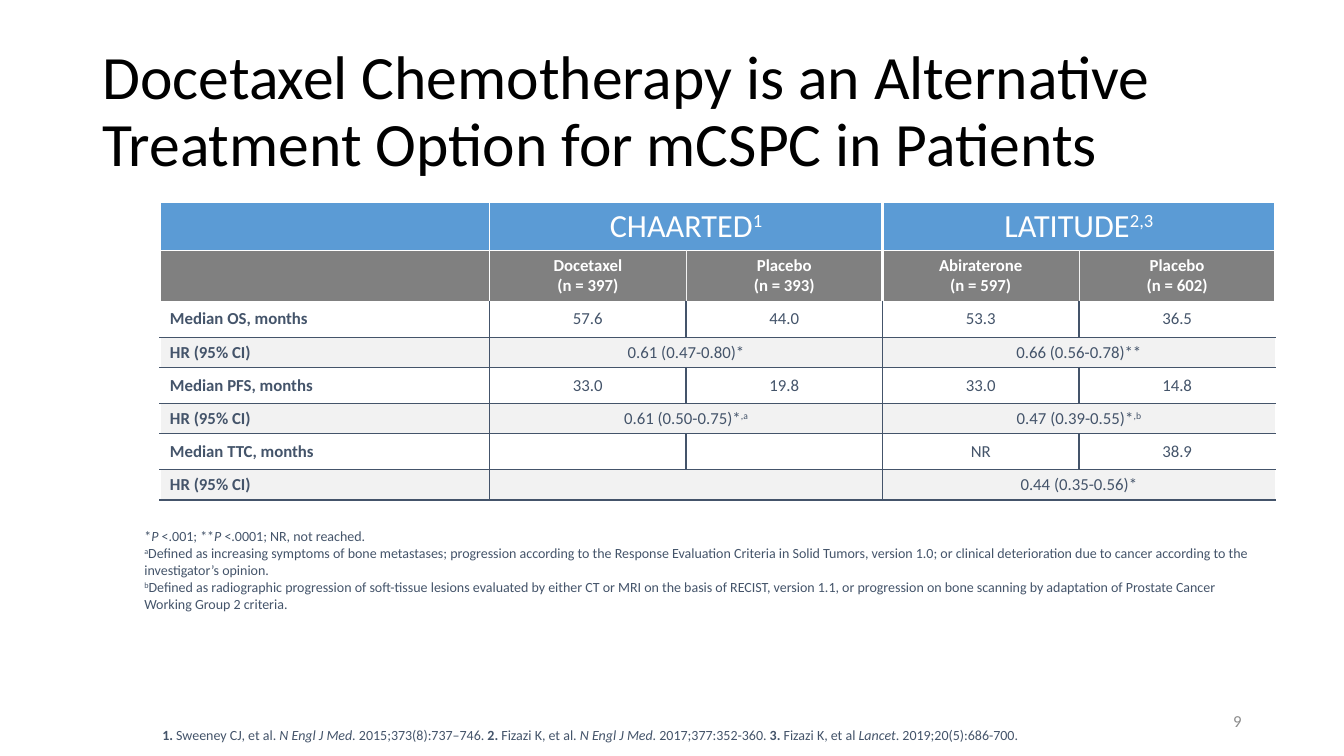
from lxml.etree import SubElement as Sub
from pptx import Presentation
from pptx.dml.color import RGBColor
from pptx.enum.text import MSO_ANCHOR, MSO_AUTO_SIZE, PP_ALIGN
from pptx.oxml.ns import qn
from pptx.util import Cm, Pt

TITLE = "Docetaxel Chemotherapy is an Alternative Treatment Option for mCSPC in Patients"
HEADS = [
    ["", [("", "CHAARTED"), ("s", "1")], None, [("", "LATITUDE"), ("s", "2,3")], None],
    ["", "Docetaxel\n(n = 397)", "Placebo\n(n = 393)", "Abiraterone\n(n = 597)", "Placebo\n(n = 602)"],
]
BODY = [
    ["Median OS, months", "57.6", "44.0", "53.3", "36.5"],
    ["HR (95% CI)", "0.61 (0.47-0.80)*", None, "0.66 (0.56-0.78)**", None],
    ["Median PFS, months", "33.0", "19.8", "33.0", "14.8"],
    ["HR (95% CI)", [("", "0.61 (0.50-0.75)*"), ("s", ",a")], None,
     [("", "0.47 (0.39-0.55)*"), ("s", ",b")], None],
    ["Median TTC, months", "", "", "NR", "38.9"],
    ["HR (95% CI)", "", None, "0.44 (0.35-0.56)*", None],
]
NOTES = [
    [("", "*"), ("i", "P"), ("", " <.001; **"), ("i", "P"), ("", " <.0001; NR, not reached.")],
    [("s", "a"), ("", "Defined as increasing symptoms of bone metastases; progression according to the "
                  "Response Evaluation Criteria in Solid Tumors, version 1.0; or clinical deterioration "
                  "due to cancer according to the investigator’s opinion.")],
    [("s", "b"), ("", "Defined as radiographic progression of soft-tissue lesions evaluated by either CT "
                  "or MRI on the basis of RECIST, version 1.1, or progression on bone scanning by "
                  "adaptation of Prostate Cancer Working Group 2 criteria.")],
]
REFS = [[
    ("b", "1. "), ("", "Sweeney CJ, et al. "), ("i", "N Engl J Med. "), ("", "2015;373(8):737–746. "),
    ("b", "2. "), ("", "Fizazi K, et al. "), ("i", "N Engl J Med. "), ("", "2017;377:352-360. "),
    ("b", "3. "), ("", "Fizazi K, et al "), ("i", "Lancet"), ("", ". 2019;20(5):686-700."),
]]
WIDTHS = [8.31] + [4.95] * 4
HEIGHTS = [1.22, 1.27] + [0.91, 0.76] * 3
NAVY, WHITE, PALE = "44546A", "FFFFFF", "F2F2F2"
BLUE, GREY, DIM, BLACK = "5B9BD5", "808080", "8C8C8C", "000000"


def rgb(code):
    return RGBColor.from_string(code)


def style(run, size, color, marks=""):
    font = run.font
    font.name, font.size, font.color.rgb = "Calibri", Pt(size), rgb(color)
    font.bold, font.italic = "b" in marks, "i" in marks
    if "s" in marks:
        run._r.get_or_add_rPr().set("baseline", "30000")


def write(frame, paras, size, color, align=PP_ALIGN.LEFT, marks=""):
    for k, parts in enumerate(paras):
        para = frame.add_paragraph() if k else frame.paragraphs[0]
        para.alignment = align
        for mark, text in parts:
            run = para.add_run()
            run.text = text
            style(run, size, color, mark + marks)
        if not parts:
            Sub(para._p, qn("a:endParaRPr"), sz=str(size * 100))


def box(spot, paras, size, color, align=PP_ALIGN.LEFT, anchor=MSO_ANCHOR.TOP):
    frame = slide.shapes.add_textbox(*map(Cm, spot)).text_frame
    frame.word_wrap = True
    frame.vertical_anchor = anchor
    write(frame, paras, size, color, align)


def border(cell, side, color, width):
    line = Sub(cell._tc.get_or_add_tcPr(), qn("a:ln" + side), w=str(int(Pt(width))))
    Sub(Sub(line, qn("a:solidFill")), qn("a:srgbClr"), val=color)


def upright(row, edge):
    if row >= 2:
        return (WHITE, 1) if edge in (0, 5) else (NAVY, 1)
    if row and edge in (2, 4):
        return PALE, 0.5
    return WHITE, 2.25 if edge in (3, 5) else 1


def level(edge):
    if edge < 3:
        return WHITE, 1
    return NAVY, 1.5 if edge == 8 else 1


def look(row, col):
    if row == 0:
        return BLUE, WHITE, 23, ""
    if row == 1:
        return GREY, WHITE, 12, "b"
    return PALE if row % 2 else WHITE, NAVY, 12, "" if col else "b"


def fill_in(table, row, col, data):
    cell = table.cell(row, col)
    back, ink, size, marks = look(row, col)
    joined = col > 0 and None in data
    start = col - (col + 1) % 2 if joined else col
    end = start + (2 if joined else 1)
    for side, line in (("L", upright(row, start)), ("R", upright(row, end)),
                       ("T", level(row)), ("B", level(row + 1))):
        border(cell, side, *line)
    cell.fill.solid()
    cell.fill.fore_color.rgb = rgb(back)
    cell.vertical_anchor = MSO_ANCHOR.MIDDLE
    cell.margin_top = cell.margin_bottom = Cm(0.1)
    value = data[col] or ""
    paras = [value] if isinstance(value, list) else [
        [("", text)] if text else [] for text in value.split("\n")]
    write(cell.text_frame, paras, size, ink, PP_ALIGN.CENTER if col else PP_ALIGN.LEFT, marks)
    if joined and col == start:
        cell.merge(table.cell(row, col + 1))


deck = Presentation()
deck.slide_width, deck.slide_height = Cm(33.87), Cm(19.05)
slide = deck.slides.add_slide(deck.slide_layouts[5])

title = slide.shapes.title
title.left, title.top, title.width, title.height = map(Cm, (2.33, 1.01, 29.21, 3.68))
frame = title.text_frame
frame.text = TITLE
frame.word_wrap = True
frame.auto_size = MSO_AUTO_SIZE.NONE
frame.vertical_anchor = MSO_ANCHOR.MIDDLE
frame.paragraphs[0].alignment = PP_ALIGN.LEFT
frame.paragraphs[0].line_spacing = 0.9
style(frame.paragraphs[0].runs[0], 44, BLACK)

rows = HEADS + BODY
table = slide.shapes.add_table(len(rows), len(WIDTHS), Cm(4.03), Cm(5.1),
                               Cm(sum(WIDTHS)), Cm(sum(HEIGHTS))).table
table.first_row = table.horz_banding = False
for column, width in zip(table.columns, WIDTHS):
    column.width = Cm(width)
for i, data in enumerate(rows):
    table.rows[i].height = Cm(HEIGHTS[i])
    for j in range(len(data)):
        fill_in(table, i, j, data)

box((23.92, 17.65, 7.62, 1.01), [[("", "9")]], 12, DIM, PP_ALIGN.RIGHT, MSO_ANCHOR.MIDDLE)
box((3.39, 13.18, 28.42, 2.4), NOTES, 10, NAVY)
box((3.84, 18.17, 30.02, 0.68), REFS, 10, NAVY)

deck.save("out.pptx")
